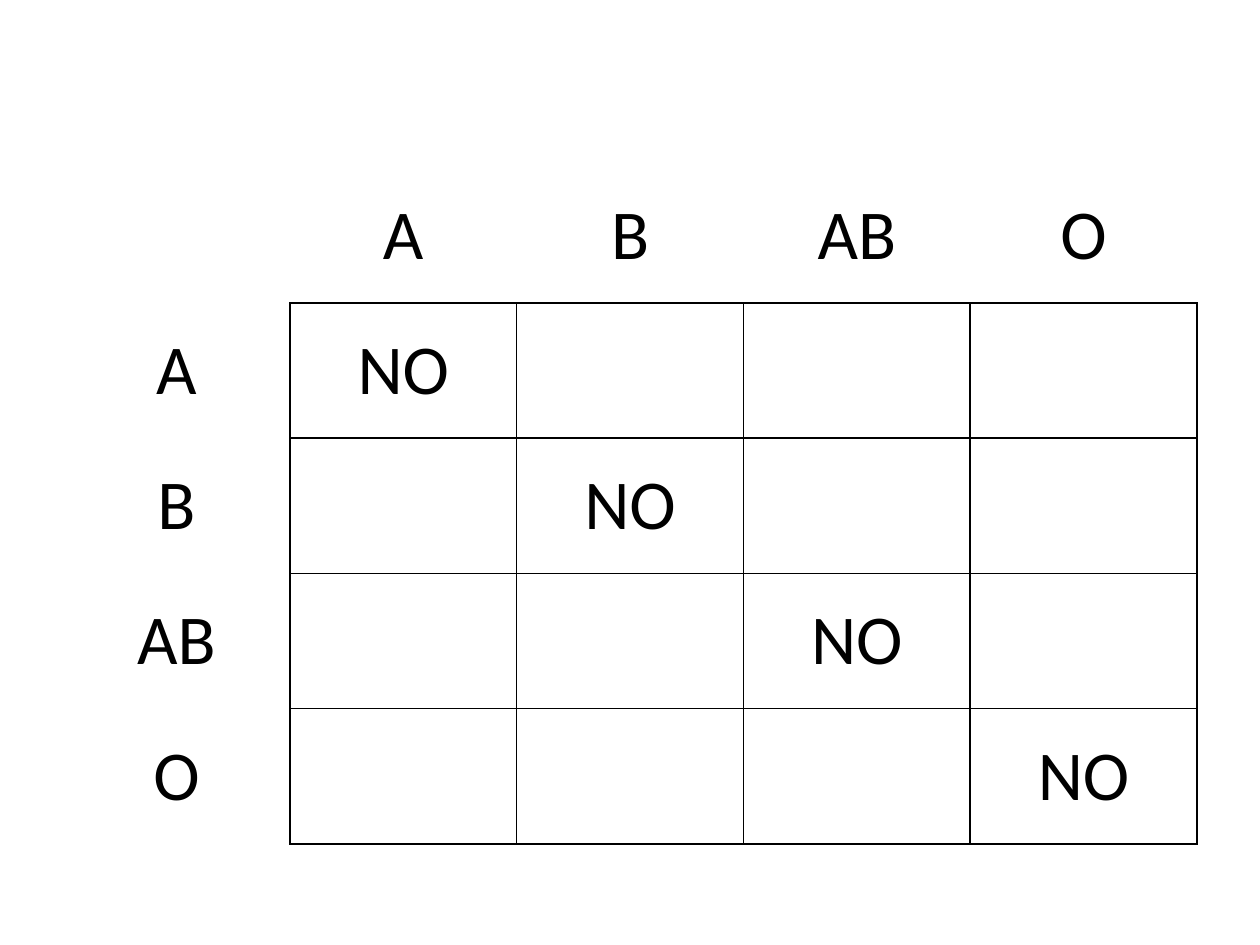
from lxml import etree
from pptx import Presentation
from pptx.dml.color import RGBColor
from pptx.enum.text import MSO_ANCHOR as Anchor, PP_ALIGN as Align
from pptx.oxml.ns import qn
from pptx.util import Inches, Pt

COLORS = {"ink": "000000"}
GROUPS = ["A", "B", "AB", "O"]


class SlideBuilder:
    font, size, border = "Calibri", Pt(40), Pt(1)

    def __init__(self, slide):
        self.slide = slide

    def edges(self, cell, visible):
        """Rule the sides named in visible (from "LRTB") and clear the rest."""
        tc_pr = cell._tc.get_or_add_tcPr()
        for side in "LRTB":
            ln = etree.SubElement(tc_pr, qn(f"a:ln{side}"), w=str(self.border))
            if side in visible:
                fill = etree.SubElement(ln, qn("a:solidFill"))
                etree.SubElement(fill, qn("a:srgbClr"), val=COLORS["ink"])
            else:
                etree.SubElement(ln, qn("a:noFill"))

    def cell(self, cell, text, visible):
        self.edges(cell, visible)
        cell.fill.background()
        cell.vertical_anchor = Anchor.MIDDLE
        p = cell.text_frame.paragraphs[0]
        p.text = text
        p.alignment = Align.CENTER
        p.space_before = Pt(6)
        p.font.name, p.font.size, p.font.bold = self.font, self.size, False
        p.font.color.rgb = RGBColor.from_string(COLORS["ink"])

    def matrix(self, rows, left, top, width, height):
        """Draw a table whose first row and column are unboxed labels."""
        n = len(rows)
        table = self.slide.shapes.add_table(
            n, len(rows[0]), Inches(left), Inches(top),
            Inches(width), Inches(height)).table
        table.first_row = table.horz_banding = False
        for i, row in enumerate(rows):
            for j, text in enumerate(row):
                if i and j:
                    visible = "LRTB"
                else:
                    visible = "R" if i else "B" if j else ""
                self.cell(table.cell(i, j), text, visible)


def main():
    prs = Presentation()
    prs.slide_width, prs.slide_height = Inches(10), Inches(7.5)
    s = SlideBuilder(prs.slides.add_slide(prs.slide_layouts[6]))
    rows = [[""] + GROUPS]
    for row_group in GROUPS:
        rows.append([row_group] + ["NO" if g == row_group else "" for g in GROUPS])
    s.matrix(rows, 0.5, 1.33, 9, 5.37)
    prs.save("out.pptx")


if __name__ == "__main__":
    main()
